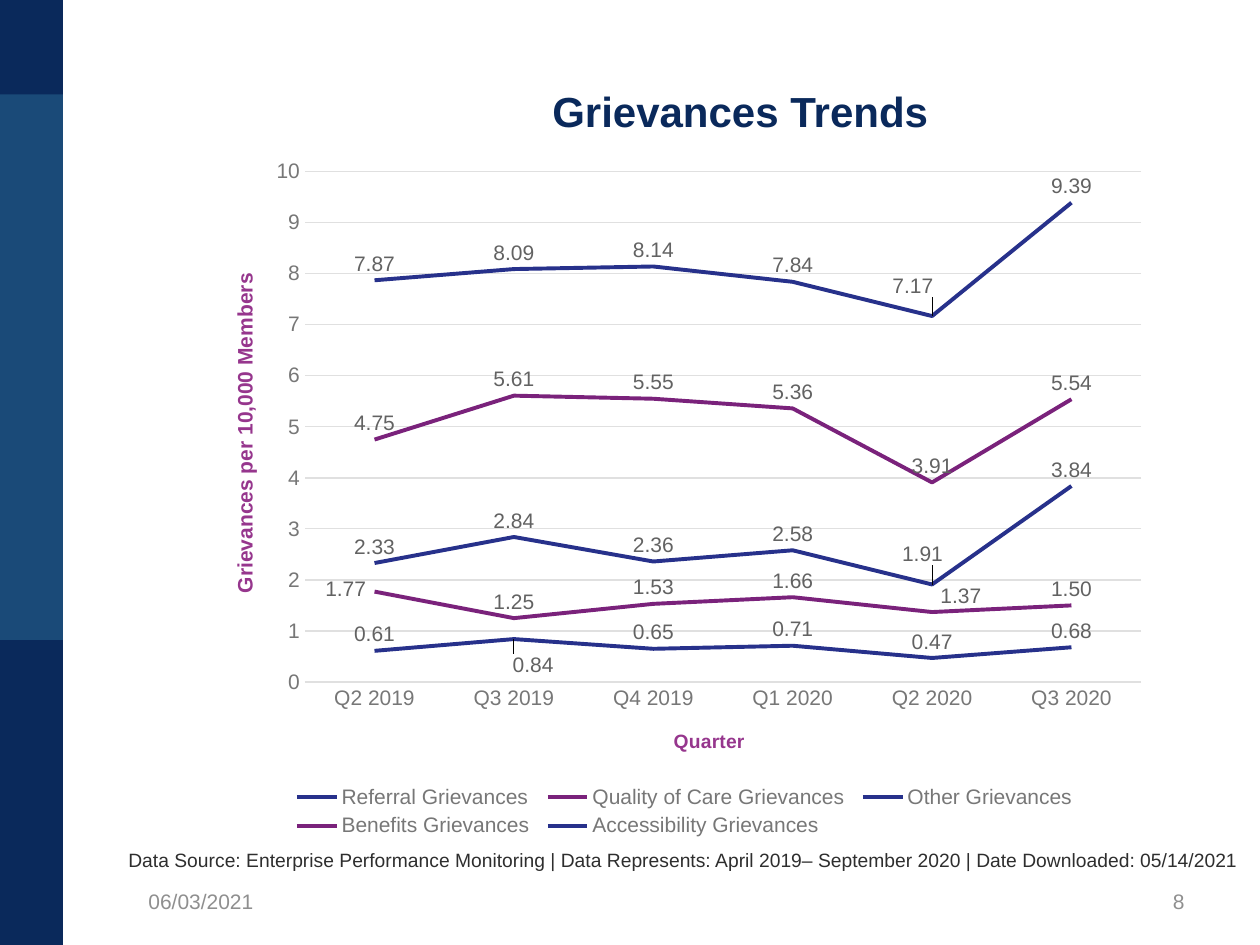
import pptx
import pptx.chart.data
import pptx.dml.color
import pptx.enum.chart
import pptx.enum.shapes
import pptx.enum.text
import pptx.oxml.ns
import pptx.util
from lxml import etree
from pptx.util import Inches

NAVY, BLUE, PURPLE = "0A295B", "27318B", "7A227B"
INK, GRAY, RULE = "2E2E2E", "777777", "E0E0E0"
ALIGN = pptx.enum.text.PP_ALIGN
ANCHOR = pptx.enum.text.MSO_ANCHOR
QUARTERS = ["Q2 2019", "Q3 2019", "Q4 2019", "Q1 2020", "Q2 2020", "Q3 2020"]
TRENDS = [
    ("Referral Grievances", [0.61, 0.84, 0.65, 0.71, 0.47, 0.68], {1: (0.02, 0.06)}),
    ("Quality of Care Grievances", [4.75, 5.61, 5.55, 5.36, 3.91, 5.54], {}),
    ("Other Grievances", [7.87, 8.09, 8.14, 7.84, 7.17, 9.39], {4: (-0.02, -0.02)}),
    ("Benefits Grievances", [1.77, 1.25, 1.53, 1.66, 1.37, 1.5],
     {0: (-0.03, 0.02), 4: (0.03, 0)}),
    ("Accessibility Grievances", [2.33, 2.84, 2.36, 2.58, 1.91, 3.84], {4: (-0.01, -0.02)}),
]


def color(code):
    return pptx.dml.color.RGBColor.from_string(code)


def style(font, size, code, bold=False):
    font.name = "Arial"
    font.size = pptx.util.Pt(size)
    font.bold = bold
    font.color.rgb = color(code)


def stroke(line, code, width):
    line.color.rgb = color(code)
    line.width = pptx.util.Pt(width)


def arrange(node, index, **parts):
    qn = pptx.oxml.ns.qn
    old = node.find(qn("c:layout"))
    if old is not None:
        node.remove(old)
    layout = etree.Element(qn("c:layout"))
    manual = etree.SubElement(layout, qn("c:manualLayout"))
    for tag, value in parts.items():
        etree.SubElement(manual, qn("c:" + tag)).set("val", str(value))
    node.insert(index, layout)


def add_text(slide, box, text, size, code, align=ALIGN.LEFT, anchor=ANCHOR.MIDDLE, bold=False):
    frame = slide.shapes.add_textbox(*map(Inches, box)).text_frame
    frame.word_wrap = True
    frame.vertical_anchor = anchor
    para = frame.paragraphs[0]
    para.text = text
    para.alignment = align
    style(para.font, size, code, bold)


def add_side(slide, left, top, width, height):
    bands = [(0, height, "1A4A78"), (0, 0.75, NAVY), (5.08, height - 5.08, NAVY)]
    for start, tall, code in bands:
        band = slide.shapes.add_shape(
            pptx.enum.shapes.MSO_SHAPE.RECTANGLE,
            *map(Inches, (left, top + start, width, tall)))
        band.shadow.inherit = False
        band.fill.solid()
        band.fill.fore_color.rgb = color(code)
        band.line.fill.background()


def name_axis(axis, text, size, x, y):
    title = axis.axis_title
    title.text_frame.text = text
    style(title.text_frame.paragraphs[0].font, size, "96368D", True)
    arrange(title._element, 1, xMode="edge", yMode="edge", x=x, y=y)


def format_axes(chart):
    tick = pptx.enum.chart.XL_TICK_MARK.NONE
    for axis in (chart.category_axis, chart.value_axis):
        axis.major_tick_mark = axis.minor_tick_mark = tick
        style(axis.tick_labels.font, 12, GRAY)
    name_axis(chart.category_axis, "Quarter", 11, 0.49, 0.83)
    name_axis(chart.value_axis, "Grievances per 10,000 Members", 12, 0.03, 0.18)
    stroke(chart.category_axis.format.line, RULE, 0.75)
    scale = chart.value_axis
    scale.minimum_scale, scale.maximum_scale, scale.major_unit = 0, 10, 1
    scale.format.line.fill.background()
    stroke(scale.major_gridlines.format.line, RULE, 0.75)
    scale.tick_labels.number_format = "#,##0"
    scale.tick_labels.number_format_is_linked = False


def format_trend(trend, code, moves):
    above = pptx.enum.chart.XL_LABEL_POSITION.ABOVE
    trend.smooth = False
    stroke(trend.format.line, code, 2.25)
    labels = trend.data_labels
    labels.show_value = True
    labels.position = above
    labels.number_format = "#,##0.00"
    labels.number_format_is_linked = False
    style(labels.font, 12, "626262")
    for index, (x, y) in moves.items():
        label = trend.points[index].data_label
        style(label.font, 12, "626262")
        label.position = above
        arrange(label._get_or_add_dLbl(), 1, x=x, y=y)


def add_trends(slide, *box):
    data = pptx.chart.data.CategoryChartData(number_format="#,##0.00")
    data.categories = QUARTERS
    for name, values, _ in TRENDS:
        data.add_series(name, values)
    kind = pptx.enum.chart.XL_CHART_TYPE.LINE
    chart = slide.shapes.add_chart(kind, *map(Inches, box), data).chart
    chart.has_title = False
    style(chart.font, 10, INK)
    plot = chart.plots[0]
    plot.vary_by_categories = False
    for index, trend in enumerate(plot.series):
        format_trend(trend, (BLUE, PURPLE)[index % 2], TRENDS[index][2])
    format_axes(chart)
    chart.has_legend = True
    legend = chart.legend
    legend.position = pptx.enum.chart.XL_LEGEND_POSITION.BOTTOM
    legend.include_in_layout = False
    style(legend.font, 12, GRAY)
    arrange(legend._element, 1, xMode="edge", yMode="edge", x=0.09, y=0.91, w=0.83, h=0.09)
    area = chart._chartSpace.chart.plotArea
    arrange(area, 0, layoutTarget="inner", xMode="edge", yMode="edge",
            x=0.11, y=0.04, w=0.87, h=0.73)


def add_footer(slide, left, top, width, height):
    add_text(slide, (left, top, 2.33, height), "06/03/2021", 12, "8F8F8F")
    add_text(slide, (left + width - 2.33, top, 2.33, height), "8", 12, "8F8F8F", ALIGN.RIGHT)


def main():
    deck = pptx.Presentation()
    deck.slide_width, deck.slide_height = Inches(10), Inches(7.5)
    slide = deck.slides.add_slide(deck.slide_layouts[6])
    add_side(slide, 0, 0, 0.5, 7.5)
    add_text(slide, (2, 0.25, 7.75, 1.25), "Grievances Trends", 24, NAVY, ALIGN.CENTER, bold=True)
    add_trends(slide, 1.58, 1.14, 7.63, 5.55)
    add_text(slide, (0.92, 6.68, 9.25, 0.29),
             "Data Source: Enterprise Performance Monitoring | Data Represents: "
             "April 2019– September 2020 | Date Downloaded: 05/14/2021",
             11, INK, anchor=ANCHOR.TOP)
    add_footer(slide, 1.08, 6.95, 8.42, 0.4)
    deck.save("out.pptx")


if __name__ == "__main__":
    main()
